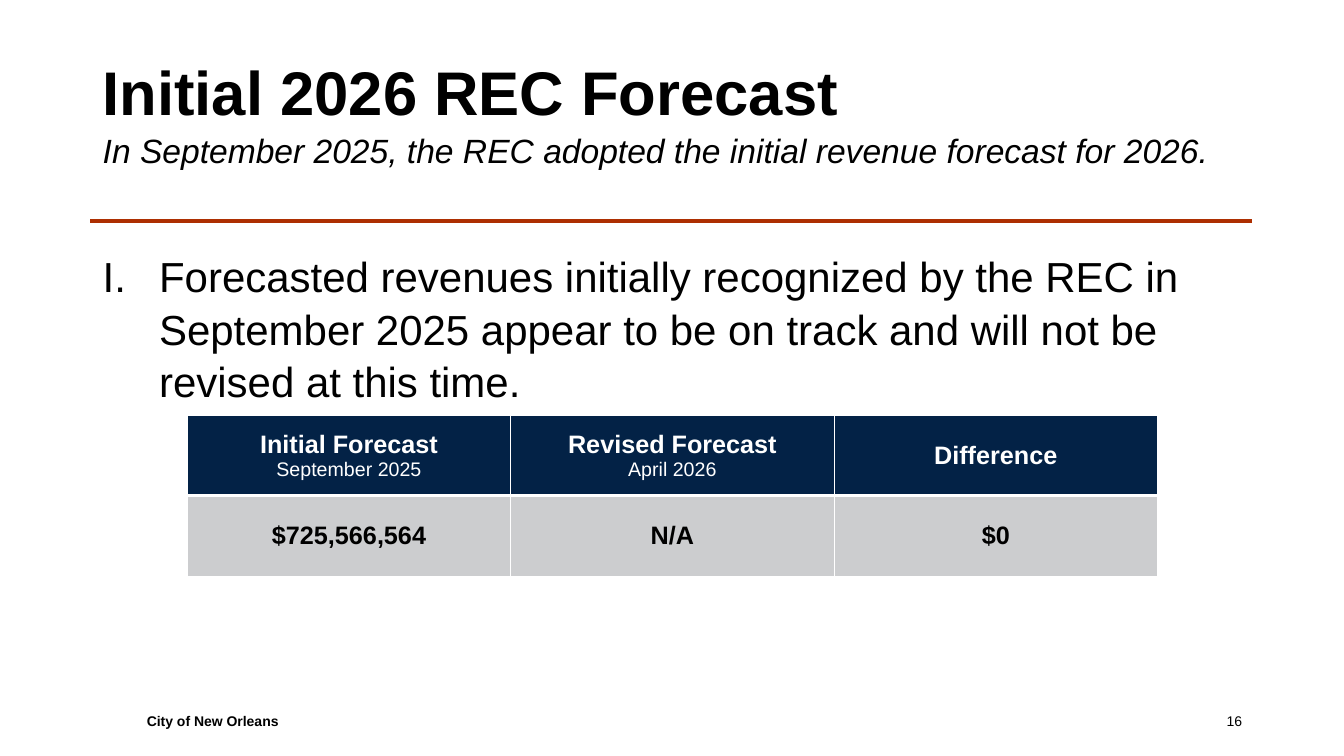
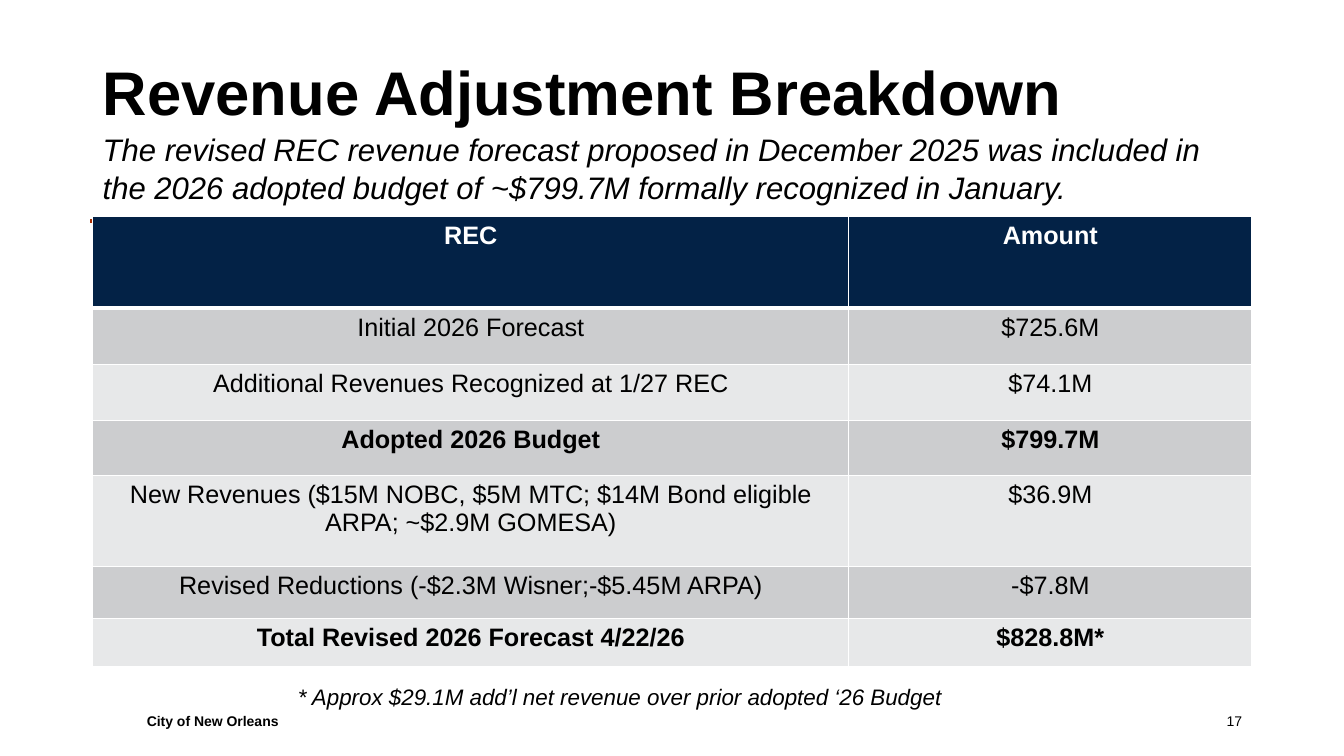
from dataclasses import dataclass

from lxml.etree import SubElement
from pptx import Presentation
from pptx.dml.color import RGBColor
from pptx.enum.shapes import MSO_CONNECTOR
from pptx.enum.text import MSO_ANCHOR, PP_ALIGN
from pptx.oxml.ns import qn
from pptx.util import Cm, Pt


@dataclass(frozen=True)
class Theme:
    font: str = "Arial"
    black: str = "000000"
    white: str = "FFFFFF"
    navy: str = "032246"
    rust: str = "AD2F01"
    bands: tuple = ("CCCDCF", "E7E8E9")
    title: float = 44
    body: float = 30
    subtitle: float = 24
    long_subtitle: float = 22.2
    cell: float = 18
    note: float = 16
    cell_note: float = 14
    footer: float = 10


THEME = Theme()
TITLE_BOX = (2.34, 1.02, 29.21, 2.39)
SUBTITLE_BOX = (2.34, 3.02, 29.21, 2.29)
BODY_BOX = (2.34, 6.05, 29.21, 11.56)
NOTE_BOX = (7.26, 17.09, 19.76, 0.94)
FOOTER_BOX = (3.45, 17.65, 19.2, 1.02)
NUMBER_BOX = (23.93, 17.65, 7.62, 1.02)
RULE_LEFT, RULE_RIGHT, RULE_Y = 2.28, 31.55, 5.56


def write(tf, text, size, color=THEME.black, bold=False, italic=False,
          align=PP_ALIGN.LEFT, anchor=MSO_ANCHOR.TOP, spacing=1.0,
          inset=0.13, numbering=None):
    tf.word_wrap = True
    tf.vertical_anchor = anchor
    tf.margin_top = Cm(inset)
    p = tf.paragraphs[0]
    if p.runs:
        p = tf.add_paragraph()
    if numbering:
        pPr = p._p.get_or_add_pPr()
        pPr.set("marL", str(Cm(1.42)))
        pPr.set("indent", str(-Cm(1.42)))
        SubElement(pPr, qn("a:buFont"), typeface=THEME.font)
        SubElement(pPr, qn("a:buAutoNum"), type=numbering)
    p.alignment = align
    p.line_spacing = spacing
    r = p.add_run()
    r.text = text
    r.font.name = THEME.font
    r.font.size = Pt(size)
    r.font.bold = bold
    r.font.italic = italic
    r.font.color.rgb = RGBColor.from_string(color)


def add_grid(s, left, top, widths, heights, rows, bold_rows, anchor):
    frame = s.shapes.add_table(len(rows), len(widths), Cm(left), Cm(top),
                               Cm(sum(widths)), Cm(sum(heights)))
    table = frame.table
    table.first_row = table.horz_banding = False
    for column, width in zip(table.columns, widths):
        column.width = Cm(width)
    for i, (row, height) in enumerate(zip(rows, heights)):
        table.rows[i].height = Cm(height)
        header = i == 0
        for j, lines in enumerate(row):
            cell = table.cell(i, j)
            tcPr = cell._tc.get_or_add_tcPr()
            for side in "LRTB":
                weight = 3 if header and side == "B" else 1
                ln = SubElement(tcPr, qn(f"a:ln{side}"), w=str(Pt(weight)))
                SubElement(SubElement(ln, qn("a:solidFill")),
                           qn("a:srgbClr"), val=THEME.white)
            cell.fill.solid()
            cell.fill.fore_color.rgb = RGBColor.from_string(
                THEME.navy if header else THEME.bands[(i - 1) % 2])
            cell.vertical_anchor = anchor
            for k, line in enumerate(lines.split("\n")):
                write(cell.text_frame, line,
                      THEME.cell_note if k else THEME.cell,
                      color=THEME.white if header else THEME.black,
                      bold=i in bold_rows and k == 0,
                      align=PP_ALIGN.CENTER, anchor=None)


slides = [
    dict(
        number=16,
        title="Initial 2026 REC Forecast",
        subtitle="In September 2025, the REC adopted the initial revenue forecast for 2026.",
        subtitle_size=THEME.subtitle,
        extra=("Forecasted revenues initially recognized by the REC in September 2025 "
               "appear to be on track and will not be revised at this time.", BODY_BOX,
               dict(size=THEME.body, spacing=1.04, inset=0.22, numbering="romanUcPeriod")),
        grid=dict(
            left=4.72, top=10.46, widths=[8.15] * 3, heights=[2.03] * 2,
            bold_rows={0, 1}, anchor=MSO_ANCHOR.MIDDLE,
            rows=[
                ("Initial Forecast\nSeptember 2025", "Revised Forecast\nApril 2026", "Difference"),
                ("$725,566,564", "N/A", "$0"),
            ]),
    ),
    dict(
        number=17,
        title="Revenue Adjustment Breakdown",
        subtitle="The revised REC revenue forecast proposed in December 2025 was included in "
                 "the 2026 adopted budget of ~$799.7M formally recognized in January.",
        subtitle_size=THEME.long_subtitle,
        extra=("* Approx $29.1M add’l net revenue over prior adopted ‘26 Budget", NOTE_BOX,
               dict(size=THEME.note, italic=True)),
        grid=dict(
            left=2.34, top=5.46, widths=[19.05, 10.16],
            heights=[2.31, 1.42, 1.4, 1.4, 2.29, 1.3, 1.22],
            bold_rows={0, 3, 6}, anchor=MSO_ANCHOR.TOP,
            rows=[
                ("REC", "Amount"),
                ("Initial 2026 Forecast", "$725.6M"),
                ("Additional Revenues Recognized at 1/27 REC", "$74.1M"),
                ("Adopted 2026 Budget", "$799.7M"),
                ("New Revenues ($15M NOBC, $5M MTC; $14M Bond eligible ARPA; ~$2.9M GOMESA)", "$36.9M"),
                ("Revised Reductions (-$2.3M Wisner;-$5.45M ARPA)", "-$7.8M"),
                ("Total Revised 2026 Forecast 4/22/26", "$828.8M*"),
            ]),
    ),
]

prs = Presentation()
prs.slide_width, prs.slide_height = Cm(33.87), Cm(19.05)

for content in slides:
    s = prs.slides.add_slide(prs.slide_layouts[6])
    rule = s.shapes.add_connector(MSO_CONNECTOR.STRAIGHT, Cm(RULE_LEFT), Cm(RULE_Y),
                                  Cm(RULE_RIGHT), Cm(RULE_Y))
    rule.line.color.rgb = RGBColor.from_string(THEME.rust)
    rule.line.width = Pt(2.75)
    SubElement(rule._element.spPr, qn("a:effectLst"))

    texts = [
        ("City of New Orleans", FOOTER_BOX,
         dict(size=THEME.footer, bold=True, anchor=MSO_ANCHOR.MIDDLE)),
        (str(content["number"]), NUMBER_BOX,
         dict(size=THEME.footer, align=PP_ALIGN.RIGHT, anchor=MSO_ANCHOR.MIDDLE)),
        (content["title"], TITLE_BOX,
         dict(size=THEME.title, bold=True, anchor=MSO_ANCHOR.MIDDLE, inset=0.3)),
        (content["subtitle"], SUBTITLE_BOX,
         dict(size=content["subtitle_size"], italic=True, spacing=1.04, inset=0.22)),
        content["extra"],
    ]
    for text, box, style in texts:
        sp = s.shapes.add_textbox(*map(Cm, box))
        write(sp.text_frame, text, **style)
    add_grid(s, **content["grid"])

prs.save("out.pptx")
